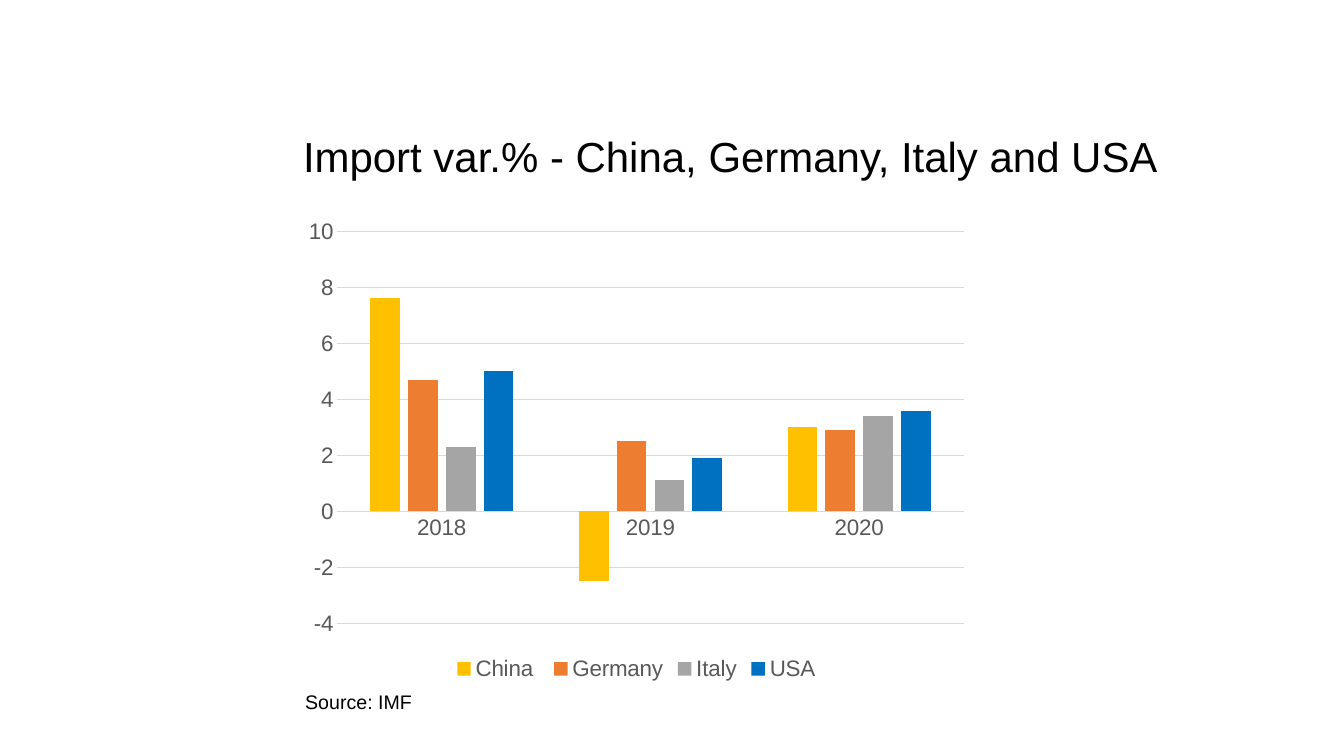
from pptx import Presentation
from pptx.chart.data import CategoryChartData
from pptx.dml.color import RGBColor
from pptx.enum.chart import XL_CHART_TYPE as ChartType, XL_LEGEND_POSITION as LegendPosition
from pptx.enum.chart import XL_TICK_MARK as TickMark
from pptx.util import Pt

COLOURS = {
    "text": "000000",
    "label": "595959",
    "grid": "D9D9D9",
    "China ": "FFC000",
    "Germany": "ED7D31",
    "Italy": "A5A5A5",
    "USA": "0070C0",
}
IMPORTS = {
    "China ": (7.6, -2.5, 3),
    "Germany": (4.7, 2.5, 2.9),
    "Italy": (2.3, 1.1, 3.4),
    "USA": (5, 1.9, 3.6),
}


def style_font(font, size, colour):
    font.name = "Arial"
    font.size = Pt(size)
    font.color.rgb = RGBColor.from_string(COLOURS[colour])


deck = Presentation()
deck.slide_width = Pt(960.48)
deck.slide_height = Pt(540)
page = deck.slides.add_slide(deck.slide_layouts[6])

data = CategoryChartData()
data.categories = ["2018", "2019", "2020"]
for country, values in IMPORTS.items():
    data.add_series(country, values)

chart = page.shapes.add_chart(
    ChartType.COLUMN_CLUSTERED, Pt(211), Pt(149.8), Pt(487.4), Pt(339.8), data
).chart
chart.has_title = False
style_font(chart.font, 16, "label")

chart.has_legend = True
chart.legend.position = LegendPosition.BOTTOM
chart.legend.include_in_layout = False
style_font(chart.legend.font, 16, "label")

plot = chart.plots[0]
plot.gap_width = 219
plot.overlap = -27
plot.vary_by_categories = False
for series in plot.series:
    series.invert_if_negative = False
    series.format.fill.solid()
    series.format.fill.fore_color.rgb = RGBColor.from_string(COLOURS[series.name])

for axis in (chart.category_axis, chart.value_axis):
    axis.major_tick_mark = TickMark.NONE
    axis.minor_tick_mark = TickMark.NONE
    style_font(axis.tick_labels.font, 16, "label")

value_axis = chart.value_axis
value_axis.minimum_scale = -4
value_axis.maximum_scale = 10
value_axis.major_unit = 2
value_axis.has_major_gridlines = True
value_axis.format.line.fill.background()
for line in (chart.category_axis.format.line, value_axis.major_gridlines.format.line):
    line.color.rgb = RGBColor.from_string(COLOURS["grid"])
    line.width = Pt(0.75)

captions = [
    ("Source: IMF", 14, 211, 489.6, 155.5, 24.5),
    ("Import var.% - China, Germany, Italy and USA", 30, 209.5, 90, 672.5, 43.9),
]
for wording, size, left, top, width, height in captions:
    box = page.shapes.add_textbox(Pt(left), Pt(top), Pt(width), Pt(height))
    box.text_frame.word_wrap = True
    span = box.text_frame.paragraphs[0].add_run()
    span.text = wording
    style_font(span.font, size, "text")

deck.save("out.pptx")
